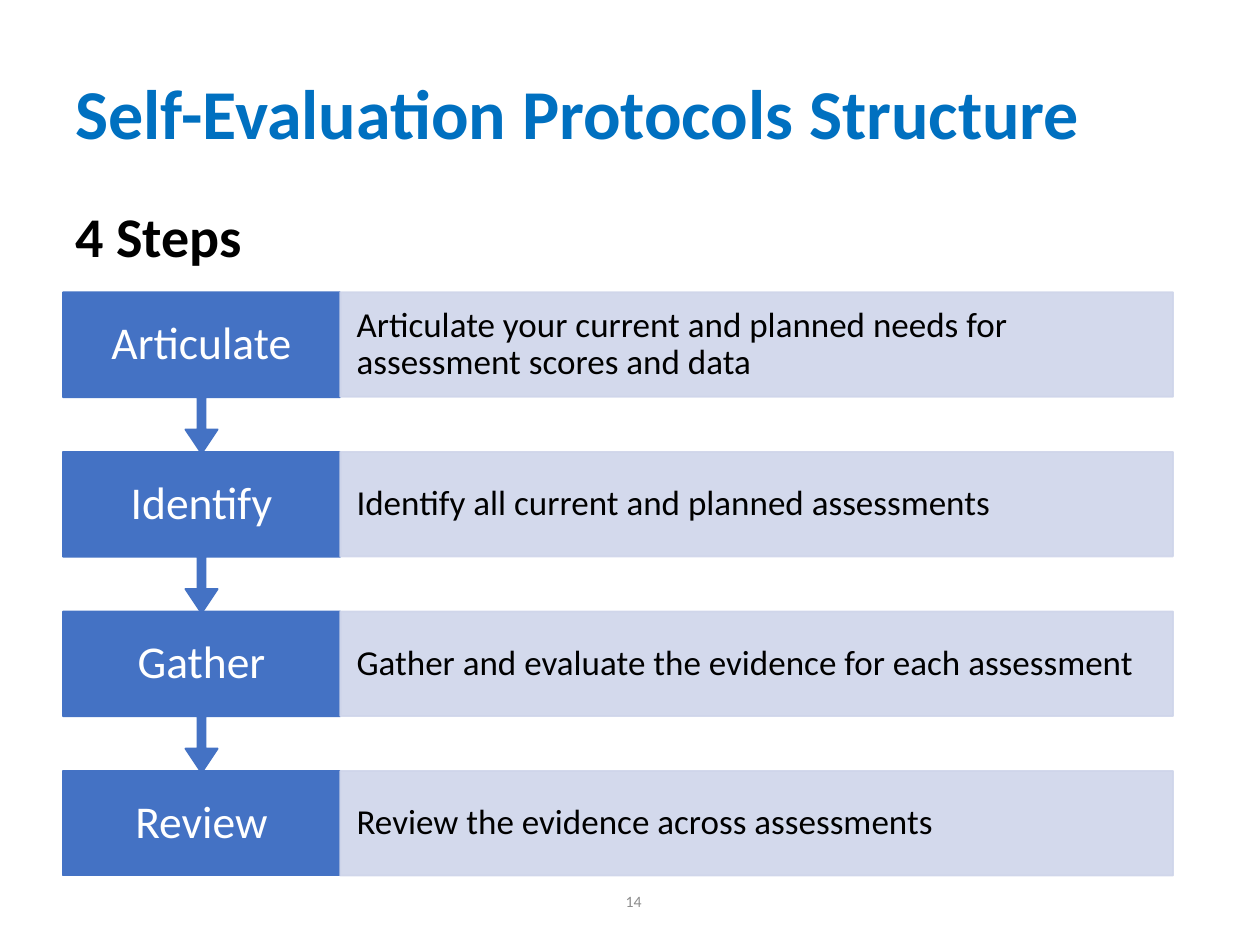
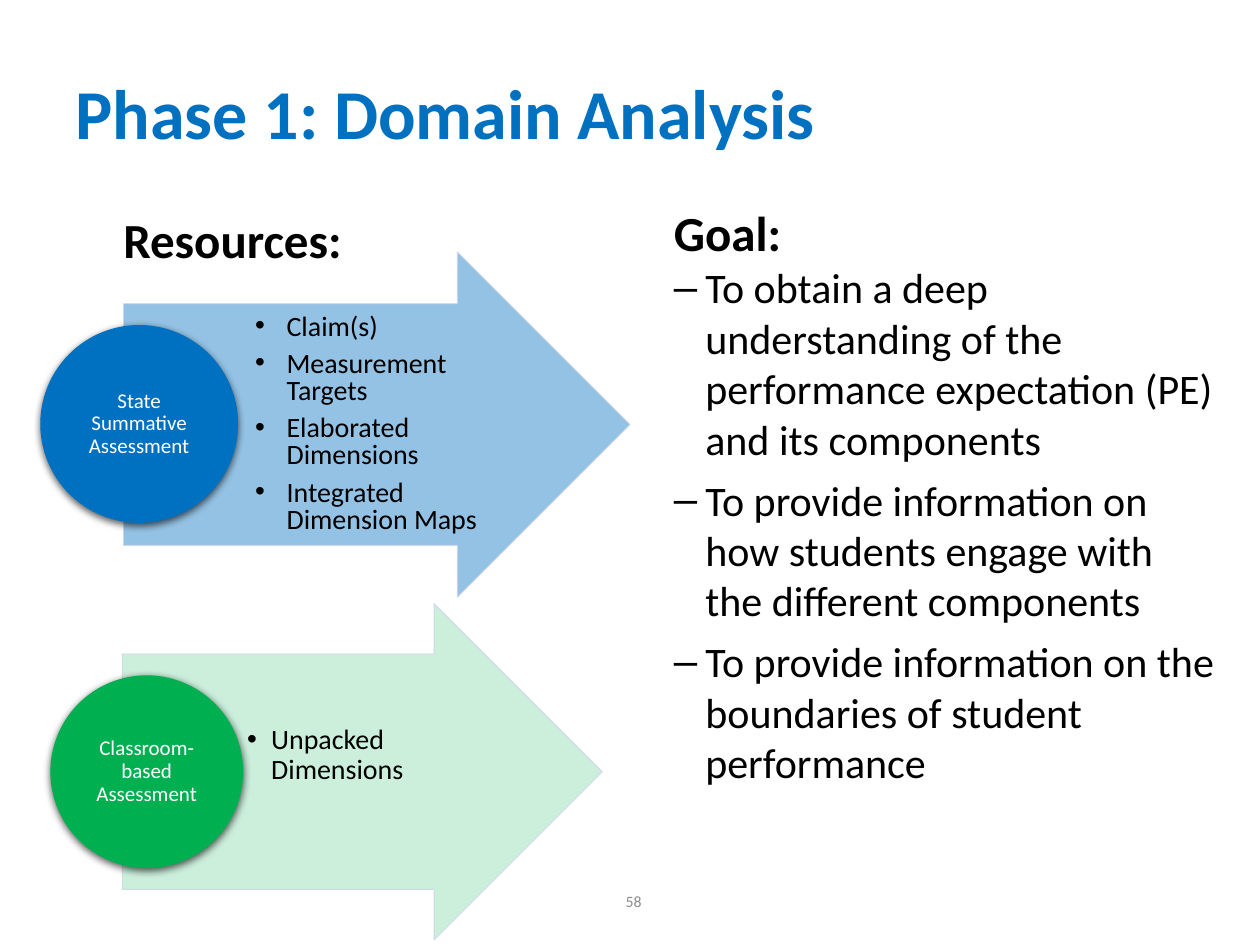
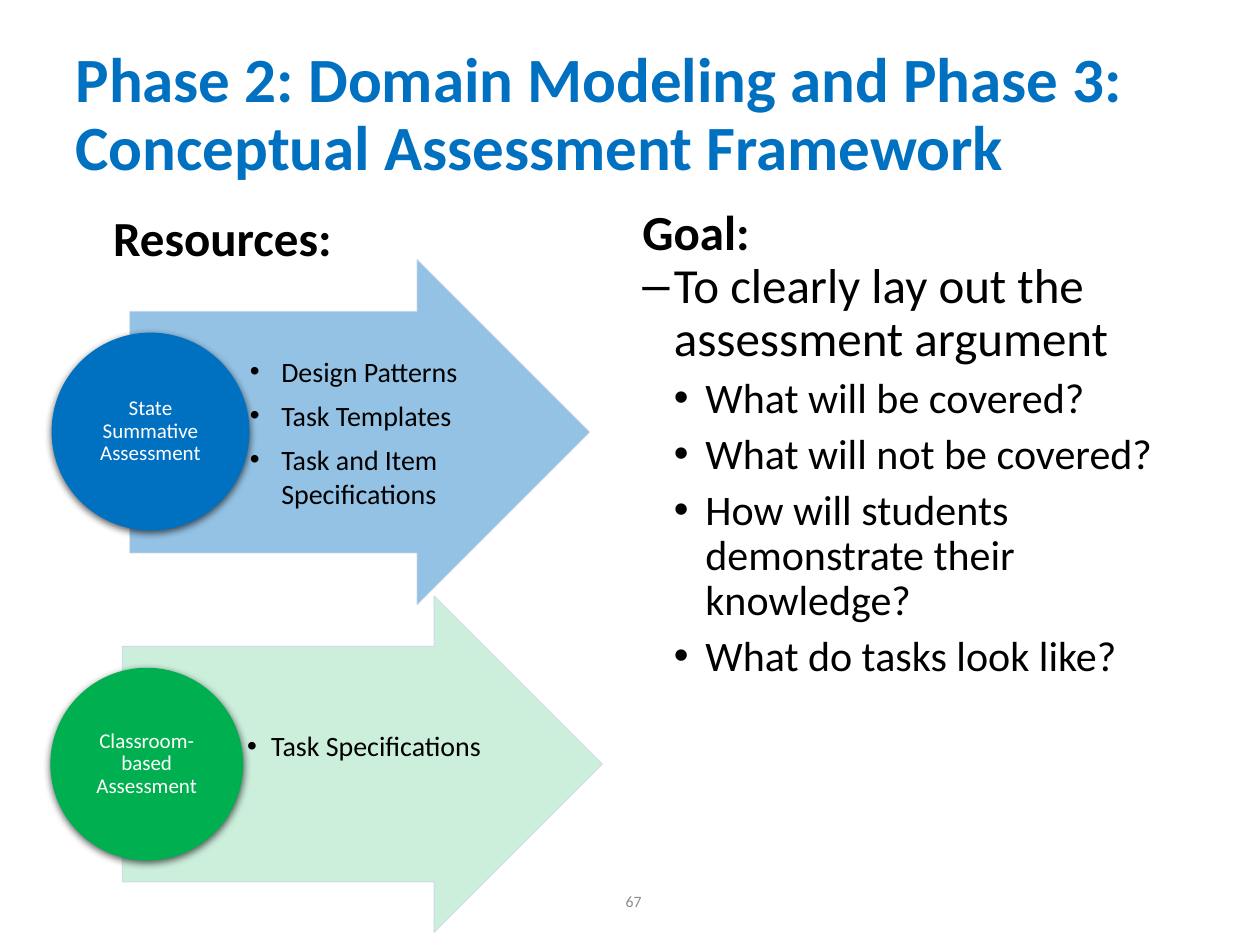
from dataclasses import dataclass

from lxml.etree import SubElement
from pptx import Presentation
from pptx.dml.color import RGBColor
from pptx.enum.shapes import MSO_SHAPE
from pptx.enum.text import MSO_ANCHOR, MSO_AUTO_SIZE, PP_ALIGN
from pptx.oxml.ns import qn
from pptx.util import Inches, Pt

FONT = "Calibri"
BLUE, GREEN, STEP_BLUE = "0070C0", "00B050", "4472C4"
PALE, BLACK, WHITE, GREY = "CFD5EA", "000000", "FFFFFF", "8C8C8C"
TITLE_ONLY = 5


@dataclass
class Line:
    """One paragraph and its format."""
    text: str
    size: float
    bold: bool = False
    color: str = BLACK
    bullet: str = ""
    left: float = 0
    hang: float = 0.25
    spacing: float = 0.9
    after: float = 0


@dataclass
class Resource:
    """An arrow that lists resources, with a disc naming the assessment."""
    label: str
    color: str
    alpha: int
    arrow: tuple[float, float, float, float]
    disc: tuple[float, float, float]
    items: list[Line]
    bottom_inset: float = 0.01


def fill_solid(fill, color: str, alpha: int = 100) -> None:
    fill.solid()
    fill.fore_color.rgb = RGBColor.from_string(color)
    if alpha < 100:
        node = fill._xPr.find(qn("a:solidFill")).find(qn("a:srgbClr"))
        SubElement(node, qn("a:alpha"), val=str(alpha * 1000))


def add_bullet(para, line: Line) -> None:
    props = para._p.get_or_add_pPr()
    props.set("marL", str(Inches(line.left)))
    props.set("indent", str(-Inches(line.hang)))
    SubElement(props, qn("a:buFont"), typeface="Arial")
    SubElement(props, qn("a:buChar"), char=line.bullet)


def write(box, lines: list[Line], *, align=PP_ALIGN.LEFT, anchor=MSO_ANCHOR.TOP,
          insets: tuple[float, ...] = (0.1, 0.05, 0.1, 0.05)) -> None:
    frame = box.text_frame
    frame.word_wrap = True
    frame.auto_size = MSO_AUTO_SIZE.NONE
    frame.vertical_anchor = anchor
    (frame.margin_left, frame.margin_top,
     frame.margin_right, frame.margin_bottom) = map(Inches, insets)
    for index, line in enumerate(lines):
        para = frame.add_paragraph() if index else frame.paragraphs[0]
        if line.bullet:
            add_bullet(para, line)
        para.alignment = align
        para.line_spacing = line.spacing
        para.space_before = Pt(0)
        para.space_after = Pt(line.after)
        span = para.add_run()
        span.text = line.text
        span.font.name = FONT
        span.font.size = Pt(line.size)
        span.font.bold = line.bold
        span.font.color.rgb = RGBColor.from_string(line.color)


def add_text(page, left: float, top: float, width: float, height: float,
             lines: list[Line], **options) -> None:
    box = page.shapes.add_textbox(*map(Inches, (left, top, width, height)))
    write(box, lines, **options)


def add_figure(page, kind, place: tuple[float, ...], color: str, *, alpha: int = 100,
               line: str = "", line_width: float = 1, line_alpha: int = 100,
               adjust: tuple[float, ...] = ()):
    shape = page.shapes.add_shape(kind, *map(Inches, place))
    for index, value in enumerate(adjust):
        shape.adjustments[index] = value
    fill_solid(shape.fill, color, alpha)
    if line:
        fill_solid(shape.line.fill, line, line_alpha)
        shape.line.width = Pt(line_width)
    else:
        shape.line.fill.background()
    shape.shadow.inherit = False
    return shape


def add_soft_shadow(shape) -> None:
    effects = shape._element.spPr.find(qn("a:effectLst"))
    shadow = SubElement(effects, qn("a:outerShdw"), blurRad=str(Pt(4.5)),
                        dist=str(Pt(1.5)), dir="5400000", rotWithShape="0")
    color = SubElement(shadow, qn("a:srgbClr"), val=BLACK)
    SubElement(color, qn("a:alpha"), val="63000")


def add_page(deck, title: str, number: int, title_size: float = 40):
    page = deck.slides.add_slide(deck.slide_layouts[TITLE_ONLY])
    heading = page.shapes.title
    heading.left, heading.top, heading.width, heading.height = map(
        Inches, (0.5, 0.3, 9, 1.25))
    write(heading, [Line(title, title_size, bold=True, color=BLUE)],
          anchor=MSO_ANCHOR.MIDDLE)
    add_text(page, 2.94, 6.95, 2.25, 0.4, [Line(str(number), 9, color=GREY, spacing=1)],
             align=PP_ALIGN.RIGHT, anchor=MSO_ANCHOR.MIDDLE)
    return page


def add_heading(page, left: float, top: float, width: float, text: str, size: float) -> None:
    add_text(page, left, top, width, 0.6, [Line(text, size, bold=True, spacing=1)])


def add_steps(page, steps: list[tuple[str, str]]) -> None:
    left, first_top, last_top = 0.5, 2.32, 6.12
    name_width, detail_width, height, callout_height = 2.2, 6.61, 0.83, 1.28
    last = len(steps) - 1
    pitch = (last_top - first_top) / last
    for index in range(last, -1, -1):
        name, detail = steps[index]
        top = first_top + index * pitch
        if index == last:
            box = add_figure(page, MSO_SHAPE.RECTANGLE, (left, top, name_width, height),
                             STEP_BLUE, line=STEP_BLUE)
        else:
            box = add_figure(page, MSO_SHAPE.DOWN_ARROW_CALLOUT,
                             (left, top, name_width, callout_height), STEP_BLUE,
                             line=STEP_BLUE, adjust=(0.05, 0.1, 0.15, 0.65))
        write(box, [Line(name, 26, color=WHITE)], align=PP_ALIGN.CENTER,
              anchor=MSO_ANCHOR.MIDDLE, insets=(0.16, 0.1, 0.16, 0.1))
        band = add_figure(page, MSO_SHAPE.RECTANGLE,
                          (left + name_width, top, detail_width, height),
                          PALE, alpha=90, line=PALE, line_alpha=90)
        write(band, [Line(detail, 20)], anchor=MSO_ANCHOR.MIDDLE,
              insets=(0.13, 0.05, 0.13, 0.05))


def add_resource(page, resource: Resource) -> None:
    add_figure(page, MSO_SHAPE.RIGHT_ARROW, resource.arrow, resource.color,
               alpha=resource.alpha, line=PALE, line_width=0.5, line_alpha=90,
               adjust=(0.7, 0.5))
    left, top, width, height = resource.arrow
    add_text(page, left + width * 0.25, top + height * 0.15,
             width * 0.75 - 0.93, height * 0.7, resource.items,
             anchor=MSO_ANCHOR.MIDDLE, insets=(0.04, 0.01, 0.02, resource.bottom_inset))
    left, top, diameter = resource.disc
    disc = add_figure(page, MSO_SHAPE.OVAL, (left, top, diameter, diameter), resource.color)
    add_soft_shadow(disc)
    write(disc, [Line(resource.label, 12, color=WHITE)], align=PP_ALIGN.CENTER,
          anchor=MSO_ANCHOR.MIDDLE, insets=(0.01,) * 4)


def state_resource(left: float, top: float, width: float, disc_left: float,
                   items: list[str], spacing: float) -> Resource:
    lines = [Line(item, 16, bullet="•", left=0.25, spacing=spacing, after=6)
             for item in items]
    return Resource("State Summative Assessment", BLUE, 42, (left, top, width, 2.74),
                    (disc_left, top + 0.58, 1.57), lines)


def classroom_resource(top: float, item: str) -> Resource:
    line = Line(item, 16, bullet="•", left=0.19, hang=0.19, after=2.4)
    return Resource("Classroom-based Assessment", GREEN, 20, (0.97, top, 3.81, 2.67),
                    (0.4, top + 0.57, 1.53), [line], bottom_inset=0.27)


def add_goal(page, place: tuple[float, ...], lines: list[Line]) -> None:
    add_text(page, *place, [Line("Goal:", 28, bold=True), *lines])


def main() -> None:
    deck = Presentation()
    deck.slide_width, deck.slide_height = Inches(10), Inches(7.5)

    page = add_page(deck, "Self-Evaluation Protocols Structure", 14)
    add_steps(page, [
        ("Articulate", "Articulate your current and planned needs for assessment scores and data"),
        ("Identify", "Identify all current and planned assessments"),
        ("Gather", "Gather and evaluate the evidence for each assessment"),
        ("Review", "Review the evidence across assessments"),
    ])
    add_heading(page, 0.5, 1.55, 1.6, "4 Steps", 32)

    page = add_page(deck, "Phase 1: Domain Analysis", 58)
    add_resource(page, state_resource(
        0.98, 2, 4.02, 0.32,
        ["Claim(s)", "Measurement Targets", "Elaborated Dimensions",
         "Integrated Dimension Maps"], 0.8))
    add_resource(page, classroom_resource(4.79, "Unpacked Dimensions"))
    add_goal(page, (5.25, 1.61, 4.5, 5.35), [
        Line(text, 24, bullet="–", left=0.25, spacing=1, after=6) for text in (
            "To obtain a deep understanding of the performance expectation (PE) "
            "and its components",
            "To provide information on how students engage with the different components",
            "To provide information on the boundaries of student performance")])
    add_heading(page, 0.88, 1.61, 2.89, "Resources:", 28)

    page = add_page(
        deck, "Phase 2: Domain Modeling and Phase 3: Conceptual Assessment Framework", 67, 36)
    add_goal(page, (5, 1.6, 4.81, 4.85), [
        Line("To clearly lay out the assessment argument", 28, bullet="–", left=0.25, after=6),
        *(Line(text, 24, bullet="•", left=0.5, after=6) for text in (
            "What will be covered?", "What will not be covered?",
            "How will students demonstrate their knowledge?",
            "What do tasks look like?"))])
    add_heading(page, 0.8, 1.6, 2, "Resources:", 28)
    add_resource(page, state_resource(
        1.03, 2.06, 3.65, 0.41,
        ["Design Patterns", "Task Templates", "Task and Item Specifications"], 1))
    add_resource(page, classroom_resource(4.73, "Task Specifications"))

    deck.save("out.pptx")


if __name__ == "__main__":
    main()
